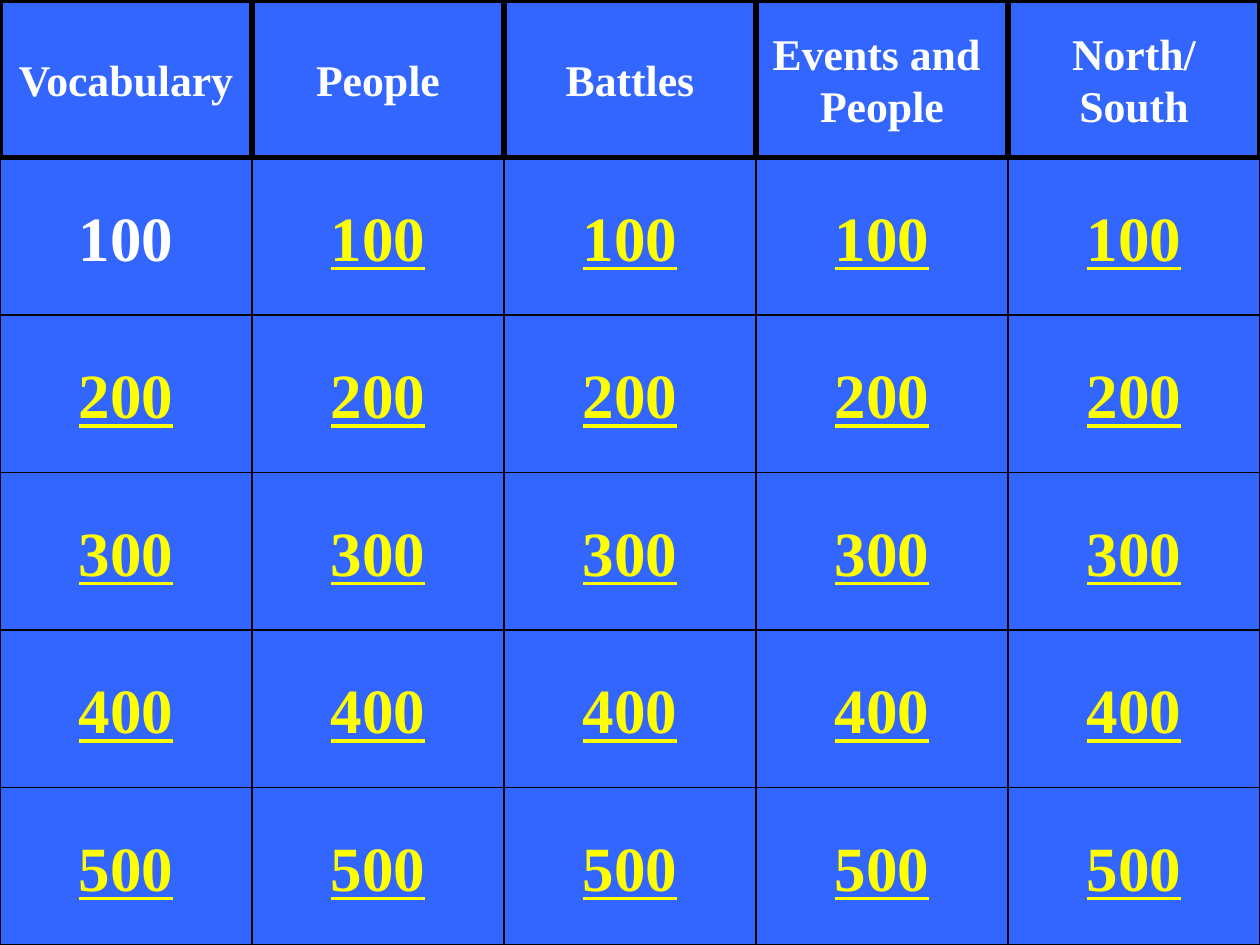
"""Build a quiz board with five categories and five point values each."""
import pptx
import pptx.dml.color
import pptx.enum.shapes
import pptx.enum.text
import pptx.util

RGBColor = pptx.dml.color.RGBColor
BLUE = RGBColor(0x33, 0x66, 0xFF)
BLACK = RGBColor(0x00, 0x00, 0x00)
WHITE = RGBColor(0xFF, 0xFF, 0xFF)
YELLOW = RGBColor(0xFF, 0xFF, 0x00)
FONT = "Times New Roman"

CATEGORIES = ["Vocabulary", "People", "Battles", "Events and \nPeople", "North/South"]
POINTS = [100, 200, 300, 400, 500]
PLAYED = {("Vocabulary", 100)}

prs = pptx.Presentation()
prs.slide_width = pptx.util.Inches(10)
prs.slide_height = pptx.util.Inches(7.5)
CELL_W = prs.slide_width // len(CATEGORIES)
CELL_H = prs.slide_height // (len(POINTS) + 1)


def add_cell(slide, text, col, row, size=36, color=YELLOW, underline=None, border=0.75):
    s = slide.shapes.add_shape(
        pptx.enum.shapes.MSO_SHAPE.RECTANGLE, col * CELL_W, row * CELL_H, CELL_W, CELL_H)
    s.shadow.inherit = False
    s.fill.solid()
    s.fill.fore_color.rgb = BLUE
    s.line.color.rgb = BLACK
    s.line.width = pptx.util.Pt(border)
    tf = s.text_frame
    tf.word_wrap = True
    tf.vertical_anchor = pptx.enum.text.MSO_ANCHOR.MIDDLE
    tf.text = text
    for p in tf.paragraphs:
        p.alignment = pptx.enum.text.PP_ALIGN.CENTER
        for r in p.runs:
            r.font.name = FONT
            r.font.size = pptx.util.Pt(size)
            r.font.bold = True
            r.font.underline = underline
            r.font.color.rgb = color


def main():
    slide = prs.slides.add_slide(prs.slide_layouts[6])
    slide.background.fill.solid()
    slide.background.fill.fore_color.rgb = BLUE
    for col, category in enumerate(CATEGORIES):
        for row, points in enumerate(POINTS, start=1):
            played = (category, points) in PLAYED
            add_cell(slide, str(points), col, row,
                     color=WHITE if played else YELLOW, underline=not played)
    for col, category in enumerate(CATEGORIES):
        add_cell(slide, category, col, 0, size=25, color=WHITE, border=3)
    prs.save("out.pptx")


if __name__ == "__main__":
    main()
